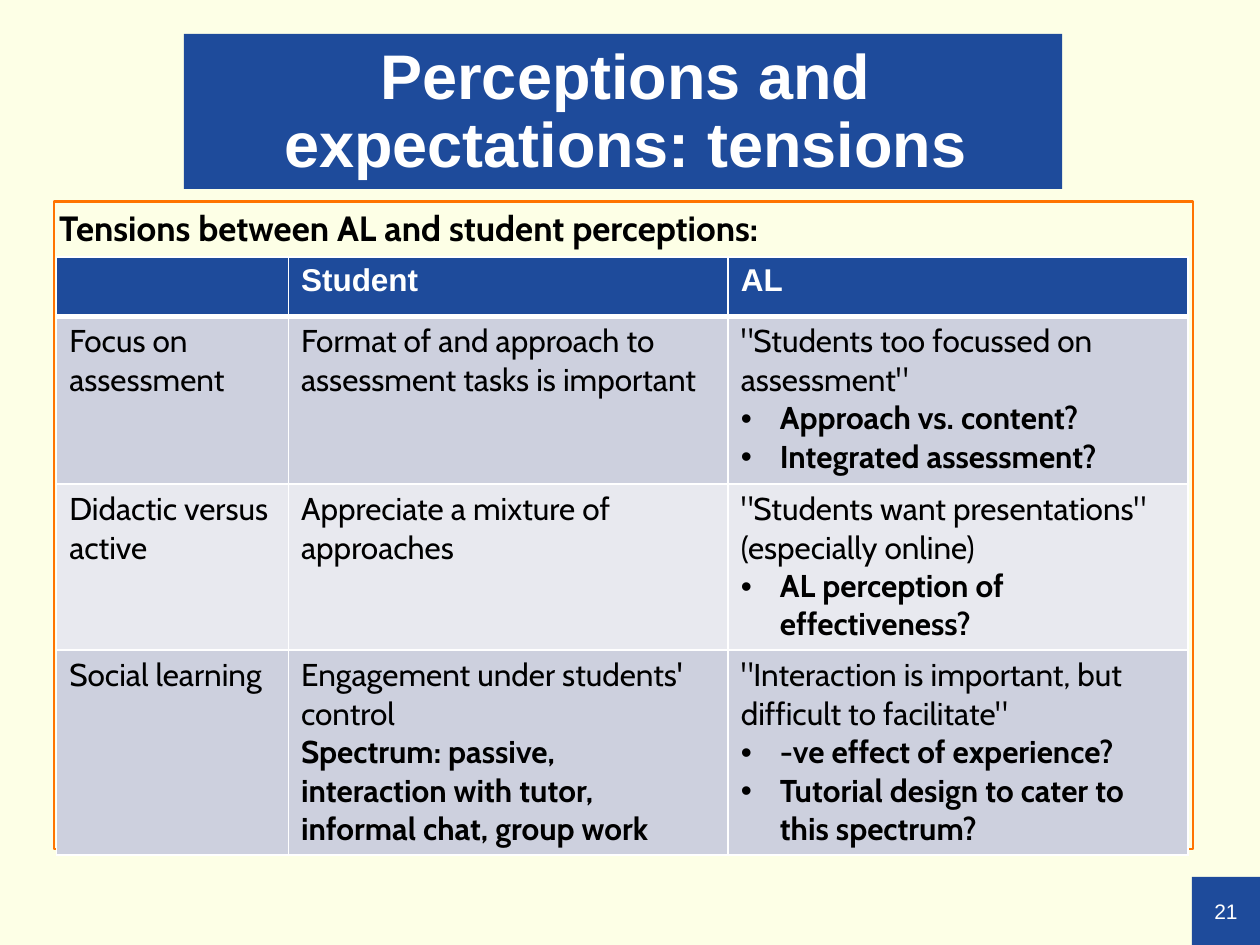
from lxml import etree
from pptx import Presentation
from pptx.dml.color import RGBColor
from pptx.enum import shapes, text
from pptx.oxml.ns import qn
from pptx.util import Inches, Pt

COLOURS = {"background": "FDFFE6", "blue": "1E4B9B", "orange": "FF7401",
           "white": "FFFFFF", "black": "000000",
           "dark band": "CDD0DE", "light band": "E8E9EF"}
HEADING = {"name": "Arial", "size": Pt(18), "bold": True, "colour": "white"}
BODY = {"name": "Cabin", "size": Pt(18), "bold": False, "colour": "black"}
STRONG = {**BODY, "bold": True}

COLUMN_WIDTHS = [1.84, 3.49, 3.65]
ROW_HEIGHTS = [0.47, 1.33, 1.19, 1.4]
BULLET_INDENT = Inches(0.31)

# Each cell is a list of (kind, text) paragraphs
ROWS = [
    [[], [("heading", "Student")], [("heading", "AL")]],
    [[("plain", "Focus on assessment")],
     [("plain", "Format of and approach to assessment tasks is important")],
     [("plain", "\"Students too focussed on assessment\""),
      ("bullet", "Approach vs. content?"),
      ("bullet", "Integrated assessment?")]],
    [[("plain", "Didactic versus active")],
     [("plain", "Appreciate a mixture of approaches")],
     [("plain", "\"Students want presentations\" (especially online)"),
      ("bullet", "AL perception of effectiveness?")]],
    [[("plain", "Social learning")],
     [("plain", "Engagement under students' control"),
      ("strong", "Spectrum: passive,"),
      ("strong", "interaction with tutor,"),
      ("strong", "informal chat, group work")],
     [("plain", "\"Interaction is important, but difficult to facilitate\""),
      ("bullet", "-ve effect of experience?"),
      ("bullet", "Tutorial design to cater to this spectrum?")]],
]
FORMATS = {"heading": HEADING, "plain": BODY, "strong": STRONG, "bullet": STRONG}


def colour(name):
    return RGBColor.from_string(COLOURS[name])


def format_font(font, values):
    for name, value in values.items():
        if name == "colour":
            font.color.rgb = colour(value)
        else:
            setattr(font, name, value)


def add_box(slide, box, words, font, fill=None, line=None, spacing=None,
            align=text.PP_ALIGN.CENTER, anchor=text.MSO_ANCHOR.MIDDLE,
            insets=(0, 0, 0, 0)):
    shape = slide.shapes.add_shape(shapes.MSO_SHAPE.RECTANGLE, *map(Inches, box))
    shape.shadow.inherit = False
    if fill:
        shape.fill.solid()
        shape.fill.fore_color.rgb = colour(fill)
    else:
        shape.fill.background()
    if line:
        shape.line.color.rgb = colour(line)
        shape.line.width = Pt(1.5)
    else:
        shape.line.fill.background()
    frame = shape.text_frame
    frame.word_wrap = True
    frame.vertical_anchor = anchor
    for side, inset in zip(("left", "top", "right", "bottom"), insets):
        setattr(frame, f"margin_{side}", Inches(inset))
    paragraph = frame.paragraphs[0]
    paragraph.text = words
    paragraph.alignment = align
    paragraph.line_spacing = spacing
    format_font(paragraph.font, font)


def add_bullet(paragraph):
    properties = paragraph._p.get_or_add_pPr()
    properties.set("marL", str(BULLET_INDENT))
    properties.set("indent", str(-BULLET_INDENT))
    etree.SubElement(properties, qn("a:buFont"), typeface="Arial")
    etree.SubElement(properties, qn("a:buChar"), char="•")


def add_borders(cell, bottom_width):
    properties = cell._tc.get_or_add_tcPr()
    widths = {"L": 1, "R": 1, "T": 1, "B": bottom_width}
    for index, (side, width) in enumerate(widths.items()):
        border = etree.Element(qn(f"a:ln{side}"), w=str(Pt(width)))
        fill = etree.SubElement(border, qn("a:solidFill"))
        etree.SubElement(fill, qn("a:srgbClr"), val=COLOURS["white"])
        properties.insert(index, border)


def fill_cell(cell, paragraphs, fill, bottom_width):
    cell.fill.solid()
    cell.fill.fore_color.rgb = colour(fill)
    add_borders(cell, bottom_width)
    frame = cell.text_frame
    for index, (kind, words) in enumerate(paragraphs):
        paragraph = frame.add_paragraph() if index else frame.paragraphs[0]
        paragraph.text = words
        if kind == "bullet":
            add_bullet(paragraph)
        format_font(paragraph.font, FORMATS[kind])


def add_tensions_table(slide, left, top):
    frame = slide.shapes.add_table(
        len(ROWS), len(COLUMN_WIDTHS), Inches(left), Inches(top),
        Inches(sum(COLUMN_WIDTHS)), Inches(sum(ROW_HEIGHTS)))
    table = frame.table
    for column, width in zip(table.columns, COLUMN_WIDTHS):
        column.width = Inches(width)
    for row, height in zip(table.rows, ROW_HEIGHTS):
        row.height = Inches(height)
    for row_index, row in enumerate(ROWS):
        band = "dark band" if row_index % 2 else "light band"
        fill = band if row_index else "blue"
        for column_index, paragraphs in enumerate(row):
            fill_cell(table.cell(row_index, column_index), paragraphs, fill,
                      bottom_width=1 if row_index else 3)


def add_tensions_slide(presentation):
    slide = presentation.slides.add_slide(presentation.slide_layouts[6])
    slide.background.fill.solid()
    slide.background.fill.fore_color.rgb = colour("background")
    # Page number
    add_box(slide, (9.46, 6.96, 0.54, 0.54), "21",
            {**HEADING, "size": Pt(12), "bold": False}, fill="blue")
    # Title
    add_box(slide, (1.46, 0.27, 6.97, 1.23),
            "Perceptions and expectations: tensions",
            {**HEADING, "size": Pt(36)}, fill="blue", spacing=0.9,
            insets=(0.04, 0.02, 0, 0))
    # Framed body with its heading
    add_box(slide, (0.43, 1.6, 9.04, 5.14),
            "Tensions between AL and student perceptions:",
            {**STRONG, "size": Pt(20)}, line="orange",
            align=text.PP_ALIGN.LEFT, anchor=text.MSO_ANCHOR.TOP,
            insets=(0.04,) * 4)
    # Comparison table
    add_tensions_table(slide, 0.45, 2.04)


def main():
    presentation = Presentation()
    presentation.slide_width = Inches(10)
    presentation.slide_height = Inches(7.5)
    add_tensions_slide(presentation)
    presentation.save("out.pptx")


if __name__ == "__main__":
    main()
